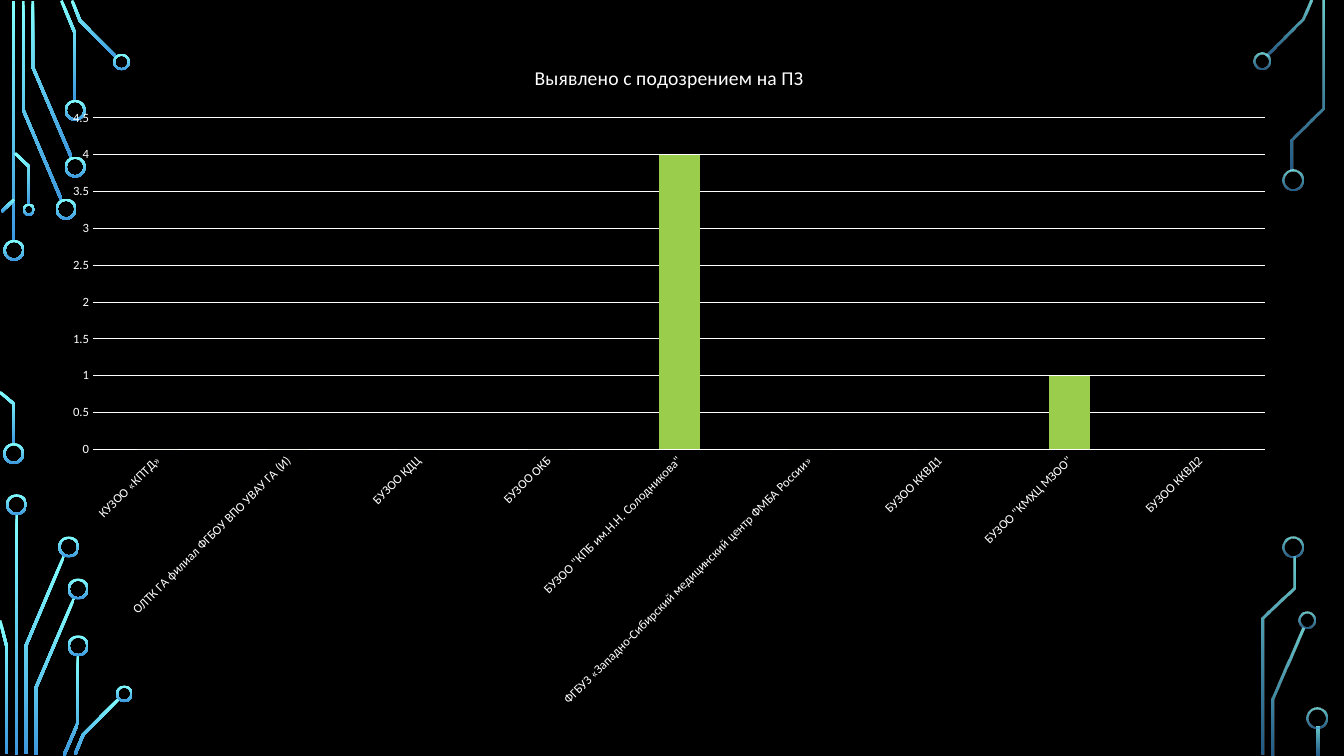
from math import hypot

from lxml import etree
from pptx import Presentation
from pptx.chart.data import CategoryChartData
from pptx.dml.color import RGBColor
from pptx.enum.chart import XL_CHART_TYPE, XL_TICK_MARK
from pptx.enum.shapes import MSO_SHAPE
from pptx.oxml.ns import qn
from pptx.util import Pt

COLUMNS = XL_CHART_TYPE.COLUMN_CLUSTERED
NO_TICKS = XL_TICK_MARK.NONE
DONUT = MSO_SHAPE.DONUT

FONT = "Calibri"
COLORS = {"background": "000000", "text": "FFFFFF", "bar": "9ACD4C",
          "trace_top": "82FFFF", "trace_bottom": "3D97DE"}

CHART_TITLE = "Выявлено с подозрением на ПЗ"
DETECTED = [
    ("КУЗОО «КПТД»", 0),
    ("ОЛТК ГА филиал ФГБОУ ВПО УВАУ ГА (И)", 0),
    ("БУЗОО КДЦ", 0),
    ("БУЗОО ОКБ", 0),
    ('БУЗОО "КПБ им.Н.Н. Солодникова"', 4),
    ("ФГБУЗ «Западно-Сибирский медицинский центр ФМБА России»", 0),
    ("БУЗОО ККВД1", 0),
    ('БУЗОО "КМХЦ МЗОО"', 1),
    ("БУЗОО ККВД2", 0),
]
CHART_BOX = (34.5, 30.2, 887, 484.6)

TRACE_WIDTH = 2
RING_WIDTH = 1.5
LARGE, MEDIUM, SMALL = 15, 12, 8.8

LEFT_TRACES = [
    [(9.7, 0.7), (9.7, 172.8)],
    [(43.9, 142.9), (16.6, 78.5), (16.6, 0.7)],
    [(51.1, 112.7), (23.4, 47.9), (23.4, 0.7)],
    [(53.6, 72), (53.6, 23.8), (43.9, 0.4)],
    [(83.2, 41), (57.2, 14.8), (51.5, 0.4)],
    [(1.1, 151.2), (10.1, 142.6)],
    [(10.1, 317.5), (10.1, 288.7), (0, 280.1)],
    [(20.9, 146.2), (20.9, 119.2), (10.8, 109.4)],
    [(11.9, 367.2), (11.9, 539.3)],
    [(45.7, 397.1), (18.4, 461.5), (18.4, 538.6)],
    [(0, 443.2), (4.7, 461.5), (4.7, 538.6)],
    [(52.9, 427.3), (25.6, 491.4), (25.6, 539.3)],
    [(55.8, 468), (55.8, 516.2), (45.7, 539.6)],
    [(85, 499), (59.4, 524.9), (53.6, 538.9)],
]
LEFT_RINGS = [
    (10, 178.8, LARGE), (9.8, 324, LARGE), (47.2, 149.4, LARGE),
    (53.7, 119.3, LARGE), (53.7, 78.8, LARGE), (86.8, 44.3, MEDIUM),
    (20.6, 149.8, SMALL), (11.8, 360.5, LARGE), (49.1, 390.7, LARGE),
    (55.8, 420.7, LARGE), (55.8, 461.3, LARGE), (88.8, 495.6, MEDIUM),
]
RIGHT_TRACES = [
    [(905, 40), (930.6, 14), (936.4, 0.4)],
    [(931, 448.9), (909, 499.3), (909, 539.3)],
    [(923, 121.7), (923, 99.7), (945, 77.4), (945, 0.7)],
    [(924.1, 397.4), (924.1, 420.1), (901.8, 441.7), (901.8, 539.3)],
    [(941.4, 519.1), (941.4, 539.3)],
]
RIGHT_RINGS = [
    (901.2, 43.6, MEDIUM), (923.4, 128.6, LARGE), (933.3, 443.1, MEDIUM),
    (923.8, 390.7, LARGE), (940.7, 512.6, LARGE),
]
CIRCUITS = [(LEFT_TRACES, LEFT_RINGS, (100, 100)),
            (RIGHT_TRACES, RIGHT_RINGS, (80, 60))]


def color(name):
    return RGBColor.from_string(COLORS[name])


def style_font(font, size):
    font.name = FONT
    font.size = Pt(size)
    font.bold = False
    font.color.rgb = color("text")


def style_line(line):
    line.color.rgb = color("text")
    line.width = Pt(0.75)


def paint(shape, opacities):
    shape.shadow.inherit = False
    shape.line.fill.background()
    shape.fill.gradient()
    shape.fill.gradient_angle = 270
    for stop, name in zip(shape.fill.gradient_stops, ("trace_top", "trace_bottom")):
        stop.color.rgb = color(name)
    tints = shape._element.spPr.iter(qn("a:srgbClr"))
    for tint, opacity in zip(tints, opacities):
        if opacity < 100:
            etree.SubElement(tint, qn("a:alpha"), val=str(opacity * 1000))


def outline(points):
    normals = []
    for (x1, y1), (x2, y2) in zip(points, points[1:]):
        length = hypot(x2 - x1, y2 - y1)
        normals.append(((y1 - y2) / length, (x2 - x1) / length))
    left, right = [], []
    corners = zip(points, normals[:1] + normals, normals + normals[-1:])
    for (x, y), (ax, ay), (bx, by) in corners:
        reach = TRACE_WIDTH / 2 / (1 + ax * bx + ay * by)
        dx, dy = (ax + bx) * reach, (ay + by) * reach
        left.append((Pt(x + dx), Pt(y + dy)))
        right.append((Pt(x - dx), Pt(y - dy)))
    return left + right[::-1]


def add_trace(page, points, opacities):
    start, *others = outline(points)
    builder = page.shapes.build_freeform(*start)
    builder.add_line_segments(others, close=True)
    paint(builder.convert_to_shape(), opacities)


def add_ring(page, x, y, size, opacities):
    ring = page.shapes.add_shape(DONUT, Pt(x - size / 2), Pt(y - size / 2),
                                 Pt(size), Pt(size))
    ring.adjustments[0] = RING_WIDTH / size
    paint(ring, opacities)


def add_detection_chart(page):
    data = CategoryChartData()
    data.categories = [name for name, count in DETECTED]
    data.add_series(CHART_TITLE, [count for name, count in DETECTED])
    chart = page.shapes.add_chart(COLUMNS, *map(Pt, CHART_BOX), data).chart
    style_font(chart.font, 10)
    chart.has_legend = False
    chart.has_title = True
    chart.chart_title.include_in_layout = False
    chart.chart_title.text_frame.text = CHART_TITLE
    style_font(chart.chart_title.text_frame.paragraphs[0].font, 14)

    plot = chart.plots[0]
    plot.gap_width = 219
    plot.overlap = -27
    plot.vary_by_categories = False
    bars = plot.series[0]
    bars.format.fill.solid()
    bars.format.fill.fore_color.rgb = color("bar")

    names, counts = chart.category_axis, chart.value_axis
    for axis in (names, counts):
        axis.major_tick_mark = axis.minor_tick_mark = NO_TICKS
        style_font(axis.tick_labels.font, 9)
    style_line(names.format.line)
    names._element.find(qn("c:txPr")).find(qn("a:bodyPr")).set("rot", "-2700000")
    counts.minimum_scale, counts.maximum_scale, counts.major_unit = 0, 4.5, 0.5
    counts.format.line.fill.background()
    counts.has_major_gridlines = True
    style_line(counts.major_gridlines.format.line)


def main():
    deck = Presentation()
    deck.slide_width, deck.slide_height = Pt(960), Pt(540)
    page = deck.slides.add_slide(deck.slide_layouts[6])
    page.background.fill.solid()
    page.background.fill.fore_color.rgb = color("background")
    for traces, rings, opacities in CIRCUITS:
        for points in traces:
            add_trace(page, points, opacities)
        for x, y, size in rings:
            add_ring(page, x, y, size, opacities)
    add_detection_chart(page)
    deck.save("out.pptx")


if __name__ == "__main__":
    main()
